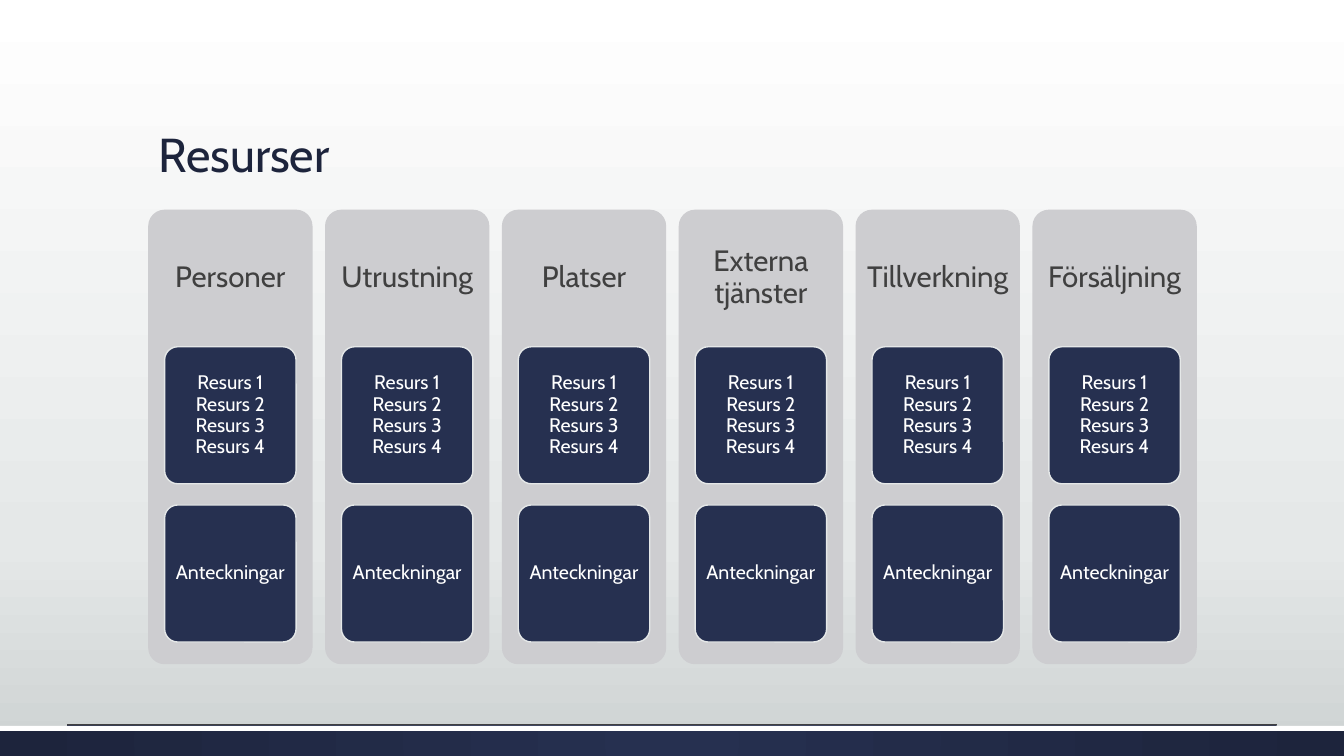
"""Build the resource overview slide: six columns, each with two cards."""
import lxml.etree
import pptx
import pptx.dml.color
import pptx.enum.dml
import pptx.enum.shapes
import pptx.enum.text
import pptx.oxml.ns
import pptx.util
from dataclasses import dataclass

TITLE = "Resurser"
COLUMNS = ["Personer", "Utrustning", "Platser", "Externa tjänster", "Tillverkning", "Försäljning"]
CARDS = ["Resurs 1\nResurs 2\nResurs 3\nResurs 4", "Anteckningar"]

WIDTH, HEIGHT = 13.33, 7.5
LEFT, TOP, GRID_WIDTH = 1.47, 2.08, 10.4
PANEL_WIDTH, PANEL_HEIGHT, HEADER_HEIGHT = 1.63, 4.51, 1.36
PANEL_STEP = (GRID_WIDTH - PANEL_WIDTH) / (len(COLUMNS) - 1)
CARD_WIDTH, CARD_HEIGHT, CARD_STEP = PANEL_WIDTH * 0.8, 1.36, 1.57
BAND_TOP = HEIGHT * 0.96
RULE_MARGIN = WIDTH * 0.05
INSET = 0.04


@dataclass(frozen=True)
class Theme:
    font: str = "Cabin"
    title_size: int = 34
    header_size: int = 21
    card_size: int = 14
    title: str = "1D243C"
    header: str = "404040"
    panel: str = "CDCDD0"
    card: str = "263050"
    card_line: str = "E5E8E8"
    white: str = "FFFFFF"
    backdrop: tuple = ((0, "FFFFFF"), (72, "E5E8E8"), (100, "CDD2D2"))
    band: tuple = ((0, "263050"), (100, "1D243C"))


THEME = Theme()
Inches = pptx.util.Inches
qn = pptx.oxml.ns.qn


def rgb(value):
    return pptx.dml.color.RGBColor.from_string(value)


def set_stops(element, stops):
    stop_list = next(element.iter(qn("a:gsLst")))
    for old in list(stop_list):
        stop_list.remove(old)
    for percent, color in stops:
        stop = lxml.etree.SubElement(stop_list, qn("a:gs"), pos=str(percent * 1000))
        lxml.etree.SubElement(stop, qn("a:srgbClr"), val=color)


def make_radial(element):
    linear = next(element.iter(qn("a:lin")))
    radial = lxml.etree.Element(qn("a:path"), path="circle")
    center = dict.fromkeys("ltrb", "50000")
    lxml.etree.SubElement(radial, qn("a:fillToRect"), center)
    linear.getparent().replace(linear, radial)


def add_box(page, kind, left, top, width, height, fill, line=None):
    box = page.shapes.add_shape(kind, *map(Inches, (left, top, width, height)))
    box.shadow.inherit = False
    box.fill.solid()
    box.fill.fore_color.rgb = rgb(fill)
    if line:
        box.line.color.rgb = rgb(line)
        box.line.width = pptx.util.Pt(1)
    else:
        box.line.fill.background()
    return box


def write(box, text, size, color, align, anchor):
    frame = box.text_frame
    frame.word_wrap = True
    frame.auto_size = pptx.enum.text.MSO_AUTO_SIZE.NONE
    frame.vertical_anchor = anchor
    para = frame.paragraphs[0]
    para.text = text
    para.alignment = align
    para.line_spacing = 0.9
    para.font.name = THEME.font
    para.font.size = pptx.util.Pt(size)
    para.font.color.rgb = rgb(color)


def add_rounded(page, place, fill, line, text, size, color, bottom=INSET):
    box = add_box(page, pptx.enum.shapes.MSO_SHAPE.ROUNDED_RECTANGLE, *place, fill, line)
    box.adjustments[0] = 0.1
    frame = box.text_frame
    frame.margin_left = frame.margin_right = frame.margin_top = Inches(INSET)
    frame.margin_bottom = Inches(bottom)
    write(box, text, size, color, pptx.enum.text.PP_ALIGN.CENTER,
          pptx.enum.text.MSO_ANCHOR.MIDDLE)


def add_backdrop(page):
    fill = page.background.fill
    fill.gradient()
    fill.gradient_angle = 270
    set_stops(page.element, THEME.backdrop)

    rectangle = pptx.enum.shapes.MSO_SHAPE.RECTANGLE
    band = add_box(page, rectangle, 0, BAND_TOP, WIDTH, HEIGHT - BAND_TOP, THEME.card)
    band.fill.gradient()
    set_stops(band.element, THEME.band)
    make_radial(band.element)
    add_box(page, rectangle, 0, BAND_TOP, WIDTH, 0.05, THEME.white)

    rule = page.shapes.add_connector(
        pptx.enum.shapes.MSO_CONNECTOR.STRAIGHT,
        *map(Inches, (RULE_MARGIN, BAND_TOP - 0.01, WIDTH - RULE_MARGIN, BAND_TOP - 0.01)))
    rule.line.color.rgb = rgb(THEME.header)
    rule.line.width = pptx.util.Pt(0.5)
    lxml.etree.SubElement(rule.element.spPr, qn("a:effectLst"))


def add_column(page, index, header):
    left = LEFT + index * PANEL_STEP
    add_rounded(page, (left, TOP, PANEL_WIDTH, PANEL_HEIGHT), THEME.panel, None,
                header, THEME.header_size, THEME.header,
                bottom=PANEL_HEIGHT - HEADER_HEIGHT + INSET)
    card_left = left + (PANEL_WIDTH - CARD_WIDTH) / 2
    for row, text in enumerate(CARDS):
        card_top = TOP + HEADER_HEIGHT + row * CARD_STEP
        add_rounded(page, (card_left, card_top, CARD_WIDTH, CARD_HEIGHT), THEME.card,
                    THEME.card_line, text, THEME.card_size, THEME.white)


def main():
    deck = pptx.Presentation()
    deck.slide_width, deck.slide_height = Inches(WIDTH), Inches(HEIGHT)
    page = deck.slides.add_slide(deck.slide_layouts.get_by_name("Title Only"))
    add_backdrop(page)
    title = page.shapes.title
    title.left, title.top, title.width, title.height = map(
        Inches, (LEFT, 0.51, GRID_WIDTH, 1.35))
    write(title, TITLE, THEME.title_size, THEME.title, pptx.enum.text.PP_ALIGN.LEFT,
          pptx.enum.text.MSO_ANCHOR.BOTTOM)
    for index, header in enumerate(COLUMNS):
        add_column(page, index, header)
    deck.save("out.pptx")


if __name__ == "__main__":
    main()
